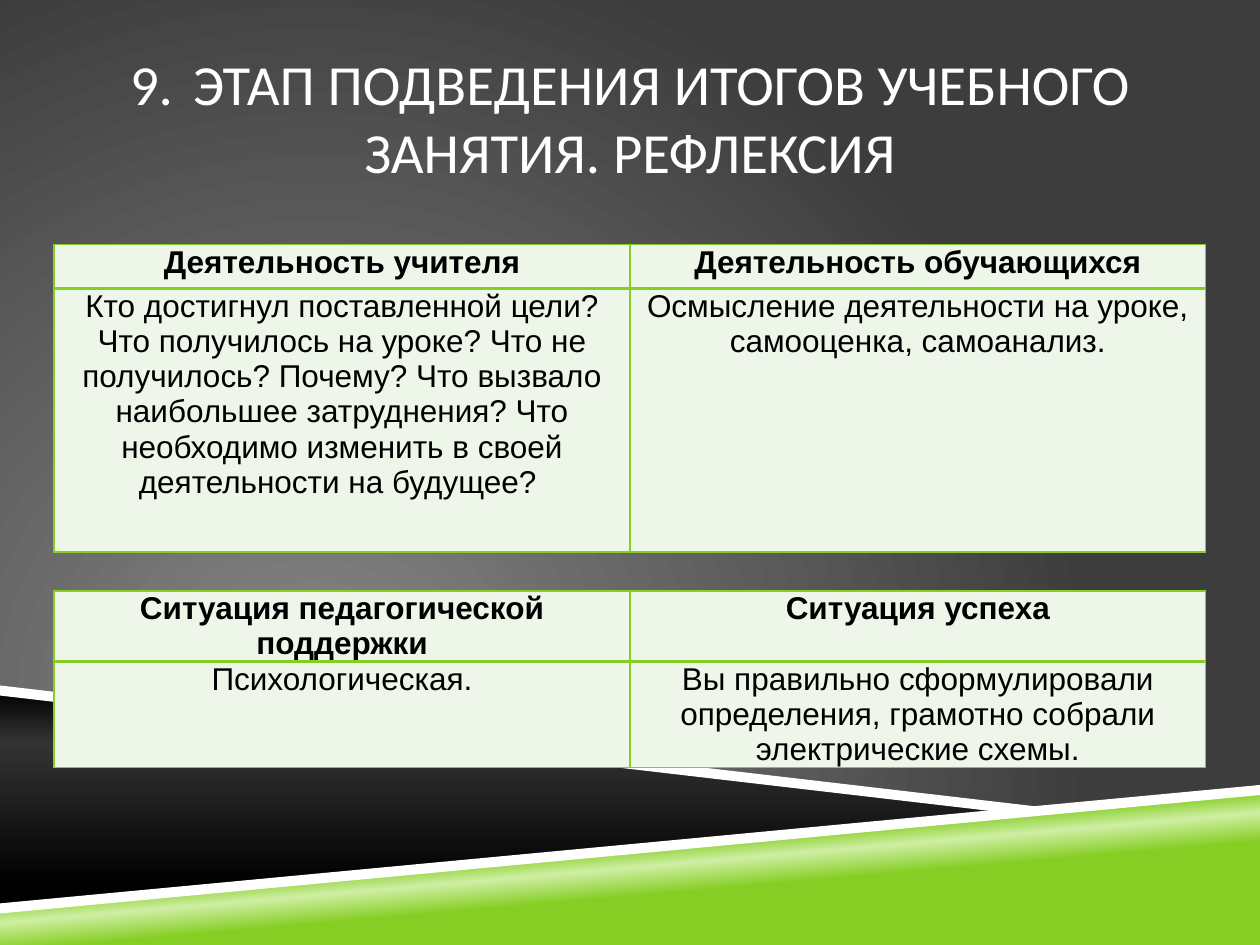
from dataclasses import dataclass

from pptx import Presentation
from pptx.dml.color import RGBColor
from pptx.enum.text import MSO_ANCHOR, MSO_AUTO_SIZE, PP_ALIGN
from pptx.oxml import parse_xml
from pptx.oxml.ns import nsdecls, qn
from pptx.util import Inches, Pt


@dataclass(frozen=True)
class Theme:
    white: str = "FFFFFF"
    black: str = "000000"
    green: str = "86CE24"
    light_green: str = "CFEFA4"
    cell: str = "EDF6E8"
    charcoal: str = "333333"
    background_light: str = "878787"
    background_dark: str = "3D3D3D"
    title_font: str = "Calibri"
    table_font: str = "Arial"
    title_size: float = 32.4
    table_size: float = 18
    thin: float = 1
    thick: float = 2


@dataclass(frozen=True)
class Gradient:
    stops: tuple[tuple[int, str], ...]
    direction: str


@dataclass(frozen=True)
class Band:
    points: tuple[tuple[float, float], ...]
    fill: str | Gradient


@dataclass(frozen=True)
class StageTable:
    top: float
    row_heights: tuple[float, float]
    headers: tuple[str, str]
    bodies: tuple[tuple[str, ...], tuple[str, ...]]


THEME = Theme()
TABLE_LEFT = 0.43
COLUMN_WIDTH = 4.57

BACKGROUND = Gradient(
    ((0, THEME.background_light), (100, THEME.background_dark)),
    '<a:path path="circle"><a:fillToRect l="50000" t="100000" r="100000" b="50000"/></a:path>',
)
BLACK_GRADIENT = Gradient(
    ((0, THEME.black), (24, THEME.charcoal), (90, THEME.black)),
    f'<a:lin ang="{90 * 60000}" scaled="0"/>',
)
GREEN_GRADIENT = Gradient(
    ((39, THEME.green), (50, THEME.light_green), (58, THEME.green)),
    f'<a:lin ang="{265 * 60000}" scaled="0"/>',
)

BANDS = (
    Band(((0, 5.48), (8.14, 6.43), (0, 7.2)), BLACK_GRADIENT),
    Band(((0, 7.21), (10, 6.27), (10, 7.5), (0, 7.5)), GREEN_GRADIENT),
    Band(((0, 5.44), (0, 5.52), (7.98, 6.45), (8.39, 6.42)), THEME.white),
    Band(((10, 6.23), (0, 7.17), (0, 7.25), (10, 6.31)), THEME.white),
)

TABLES = (
    StageTable(
        1.94,
        (0.35, 2.09),
        ("Деятельность учителя", "Деятельность обучающихся"),
        (
            (
                "Кто достигнул поставленной цели?",
                "Что получилось на уроке? Что не получилось? Почему? Что вызвало "
                "наибольшее затруднения? Что необходимо изменить в своей "
                "деятельности на будущее? ",
            ),
            ("Осмысление деятельности на уроке, самооценка, самоанализ.",),
        ),
    ),
    StageTable(
        4.69,
        (0.56, 0.84),
        ("Ситуация педагогической поддержки", "Ситуация успеха"),
        (
            ("Психологическая.",),
            ("Вы правильно сформулировали определения, грамотно собрали электрические схемы.",),
        ),
    ),
)


def apply_gradient(properties, gradient: Gradient) -> None:
    stops = "".join(
        f'<a:gs pos="{position * 1000}"><a:srgbClr val="{color}"/></a:gs>'
        for position, color in gradient.stops
    )
    element = parse_xml(
        f'<a:gradFill {nsdecls("a")} rotWithShape="1"><a:gsLst>{stops}</a:gsLst>'
        f"{gradient.direction}</a:gradFill>"
    )
    properties.replace(properties.find(qn("a:solidFill")), element)


def draw_band(slide, band: Band):
    points = [(Inches(x), Inches(y)) for x, y in band.points]
    builder = slide.shapes.build_freeform(*points[0])
    builder.add_line_segments(points[1:], close=True)
    shape = builder.convert_to_shape()
    shape.shadow.inherit = False
    shape.line.fill.background()
    shape.fill.solid()
    if isinstance(band.fill, Gradient):
        apply_gradient(shape.element.spPr, band.fill)
    else:
        shape.fill.fore_color.rgb = RGBColor.from_string(band.fill)
    return shape


def add_run(paragraph, text: str, font: str, size: float, color: str, bold: bool = False) -> None:
    paragraph.alignment = PP_ALIGN.CENTER
    run = paragraph.add_run()
    run.text = text
    run.font.name = font
    run.font.size = Pt(size)
    run.font.bold = bold
    run.font.color.rgb = RGBColor.from_string(color)


def place_title(slide, text: str) -> None:
    title = slide.shapes.title
    title.left, title.top = Inches(0.75), Inches(0.3)
    title.width, title.height = Inches(8.5), Inches(1.25)
    frame = title.text_frame
    frame.word_wrap = True
    frame.auto_size = MSO_AUTO_SIZE.NONE
    frame.vertical_anchor = MSO_ANCHOR.MIDDLE
    frame.margin_left = frame.margin_right = 0
    frame.margin_top = frame.margin_bottom = Inches(0.05)
    add_run(frame.paragraphs[0], text, THEME.title_font, THEME.title_size, THEME.white)


def set_borders(cell, top_width: float) -> None:
    properties = cell._tc.get_or_add_tcPr()
    widths = {"L": THEME.thin, "R": THEME.thin, "T": top_width, "B": THEME.thin}
    for index, (side, width) in enumerate(widths.items()):
        border = parse_xml(
            f'<a:ln{side} {nsdecls("a")} w="{Pt(width)}"><a:solidFill>'
            f'<a:srgbClr val="{THEME.green}"/></a:solidFill></a:ln{side}>'
        )
        properties.insert(index, border)


def fill_cell(cell, paragraphs: tuple[str, ...], header: bool) -> None:
    cell.margin_left = cell.margin_right = Inches(0.07)
    cell.margin_top = cell.margin_bottom = 0
    cell.fill.solid()
    cell.fill.fore_color.rgb = RGBColor.from_string(THEME.cell)
    set_borders(cell, THEME.thin if header else THEME.thick)
    frame = cell.text_frame
    for index, text in enumerate(paragraphs):
        paragraph = frame.add_paragraph() if index else frame.paragraphs[0]
        add_run(paragraph, text, THEME.table_font, THEME.table_size, THEME.black, header)


def draw_table(slide, stage: StageTable) -> None:
    table = slide.shapes.add_table(
        2, 2, Inches(TABLE_LEFT), Inches(stage.top),
        Inches(2 * COLUMN_WIDTH), Inches(sum(stage.row_heights)),
    ).table
    for row, height in zip(table.rows, stage.row_heights):
        row.height = Inches(height)
    for column, (header, body) in enumerate(zip(stage.headers, stage.bodies)):
        table.columns[column].width = Inches(COLUMN_WIDTH)
        fill_cell(table.cell(0, column), (header,), True)
        fill_cell(table.cell(1, column), body, False)


def main() -> None:
    presentation = Presentation()
    presentation.slide_width, presentation.slide_height = Inches(10), Inches(7.5)
    slide = presentation.slides.add_slide(presentation.slide_layouts[5])
    slide.background.fill.solid()
    apply_gradient(slide.element.find(".//" + qn("p:bgPr")), BACKGROUND)
    bands = [draw_band(slide, band) for band in BANDS]
    place_title(slide, "9.\tЭТАП ПОДВЕДЕНИЯ ИТОГОВ УЧЕБНОГО ЗАНЯТИЯ. РЕФЛЕКСИЯ")
    bands[-1].element.addnext(slide.shapes.title.element)
    for stage in TABLES:
        draw_table(slide, stage)
    presentation.save("out.pptx")


if __name__ == "__main__":
    main()
